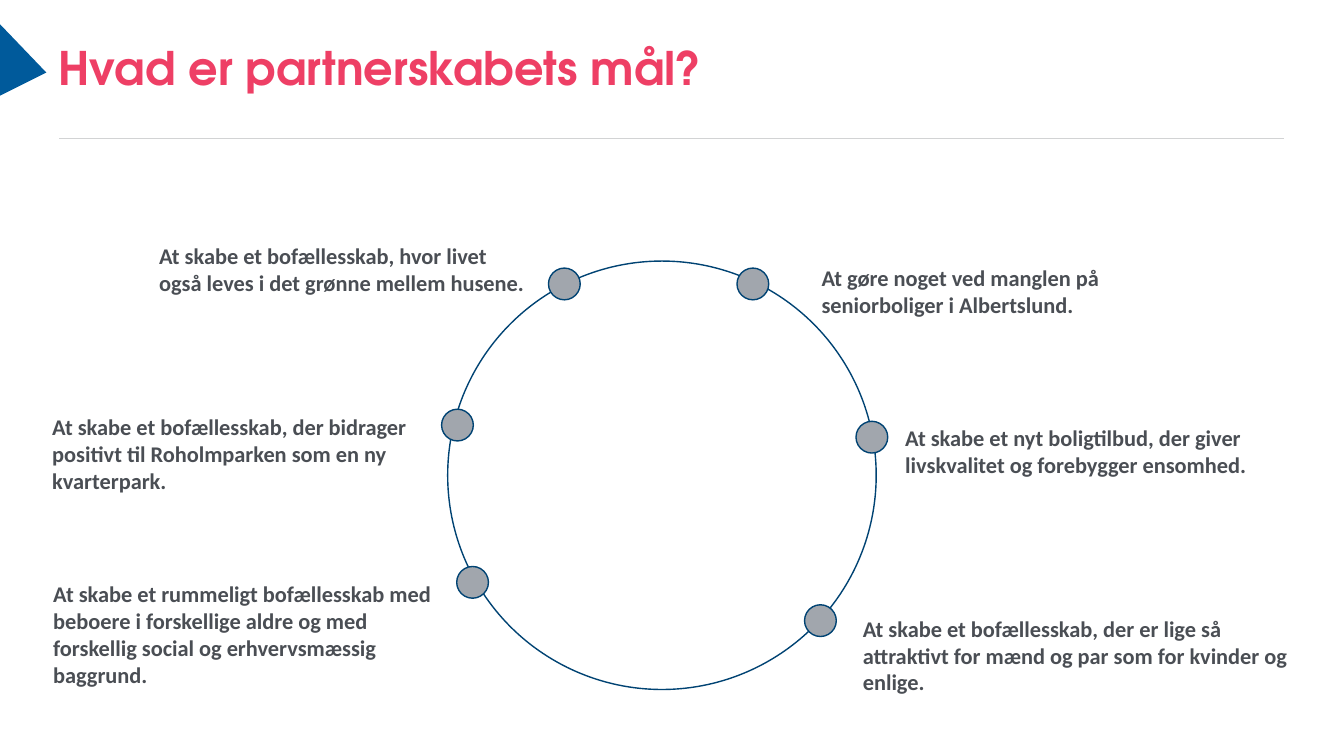
from dataclasses import dataclass

from lxml.etree import SubElement
from pptx import Presentation
from pptx.dml.color import RGBColor
from pptx.enum.shapes import MSO_CONNECTOR as Connector, MSO_SHAPE as Preset
from pptx.enum.text import MSO_ANCHOR as Anchor
from pptx.oxml.ns import qn
from pptx.util import Inches, Pt

COLUMNS, ROWS = 133.3, 75
CELL = Inches(0.1)


@dataclass(frozen=True)
class Theme:
    title_color: RGBColor = RGBColor.from_string("EE3F65")
    text_color: RGBColor = RGBColor.from_string("4A4E54")
    wedge: RGBColor = RGBColor.from_string("005A9B")
    rule: RGBColor = RGBColor.from_string("D2D3D4")
    ring: RGBColor = RGBColor.from_string("004373")
    dot: RGBColor = RGBColor.from_string("A1A6AD")
    title_font: str = "TeX Gyre Adventor"
    text_font: str = "Calibri"
    title_size: Pt = Pt(33)
    text_size: Pt = Pt(16)
    rule_width: Pt = Pt(0.5)
    ring_width: Pt = Pt(1)


@dataclass(frozen=True)
class Box:
    column: float
    row: float
    columns: float
    rows: float

    def point(self, column, row):
        return round((self.column + column) * CELL), round((self.row + row) * CELL)

    def area(self, column, row, columns, rows):
        return *self.point(column, row), round(columns * CELL), round(rows * CELL)


@dataclass(frozen=True)
class Goal:
    dot: tuple
    label: tuple
    lines: tuple


THEME = Theme()
DOT_SIZE = 3.15
GOALS = (
    Goal((73.1, 6.6), (80.5, 5.7, 35.8, 6.4),
         ("At gøre noget ved manglen på seniorboliger i Albertslund.",)),
    Goal((84.9, 21.8), (88.8, 21.6, 36.5, 6.4),
         ("At skabe et nyt boligtilbud, der giver",
          "livskvalitet og forebygger ensomhed.")),
    Goal((79.8, 40), (84.6, 40.5, 45.4, 9.1),
         ("At skabe et bofællesskab, der er lige så attraktivt for mænd og par "
          "som for kvinder og enlige.",)),
    Goal((45.3, 36.2), (4.3, 37.1, 39.6, 11.7),
         ("At skabe et rummeligt bofællesskab med beboere i forskellige aldre og "
          "med forskellig social og erhvervsmæssig baggrund.",)),
    Goal((43.8, 20.6), (4.2, 20.5, 39.7, 9.1),
         ("At skabe et bofællesskab, der bidrager positivt til Roholmparken "
          "som en ny kvarterpark.",)),
    Goal((54.4, 6.6), (14.8, 3.5, 44.5, 6.4),
         ("At skabe et bofællesskab, hvor livet",
          "også leves i det grønne mellem husene.")),
)


def add_text(slide, area, lines, font, size, color):
    frame = slide.shapes.add_textbox(*area).text_frame
    frame.word_wrap = True
    frame.text = "\n".join(lines)
    for paragraph in frame.paragraphs:
        for run in paragraph.runs:
            run.font.name = font
            run.font.size = size
            run.font.bold = True
            run.font.color.rgb = color
    return frame


def add_circle(slide, area, fill=None):
    circle = slide.shapes.add_shape(Preset.OVAL, *area)
    circle.shadow.inherit = False
    if fill is None:
        circle.fill.background()
    else:
        circle.fill.solid()
        circle.fill.fore_color.rgb = fill
    circle.line.color.rgb = THEME.ring
    circle.line.width = THEME.ring_width


def add_header(slide, box, title):
    rule = slide.shapes.add_connector(
        Connector.STRAIGHT, *box.point(5.9, 13.7), *box.point(127.4, 13.7))
    rule.line.color.rgb = THEME.rule
    rule.line.width = THEME.rule_width
    SubElement(rule._element.spPr, qn("a:effectLst"))

    outline = slide.shapes.build_freeform(*box.point(0, 2.4))
    outline.add_line_segments([box.point(0, 9.5), box.point(4.6, 7.2)], close=True)
    wedge = outline.convert_to_shape()
    wedge.shadow.inherit = False
    wedge.fill.solid()
    wedge.fill.fore_color.rgb = THEME.wedge
    wedge.line.fill.background()

    frame = add_text(slide, box.area(5.8, 1.9, 121.5, 10.3), (title,),
                     THEME.title_font, THEME.title_size, THEME.title_color)
    frame.margin_left = frame.margin_top = frame.margin_right = frame.margin_bottom = 0
    frame.vertical_anchor = Anchor.MIDDLE
    frame.paragraphs[0].line_spacing = 0.88


def add_goal_ring(slide, box, goals):
    add_circle(slide, box.area(44.4, 5.9, 42.5, 42.5))
    for goal in goals:
        add_circle(slide, box.area(*goal.dot, DOT_SIZE, DOT_SIZE), THEME.dot)
        add_text(slide, box.area(*goal.label), goal.lines,
                 THEME.text_font, THEME.text_size, THEME.text_color)


def main():
    deck = Presentation()
    deck.slide_width = round(COLUMNS * CELL)
    deck.slide_height = ROWS * CELL
    slide = deck.slides.add_slide(deck.slide_layouts[6])
    add_header(slide, Box(0, 0, COLUMNS, 20), "Hvad er partnerskabets mål?")
    add_goal_ring(slide, Box(0, 20, COLUMNS, ROWS - 20), GOALS)
    deck.save("out.pptx")


if __name__ == "__main__":
    main()
